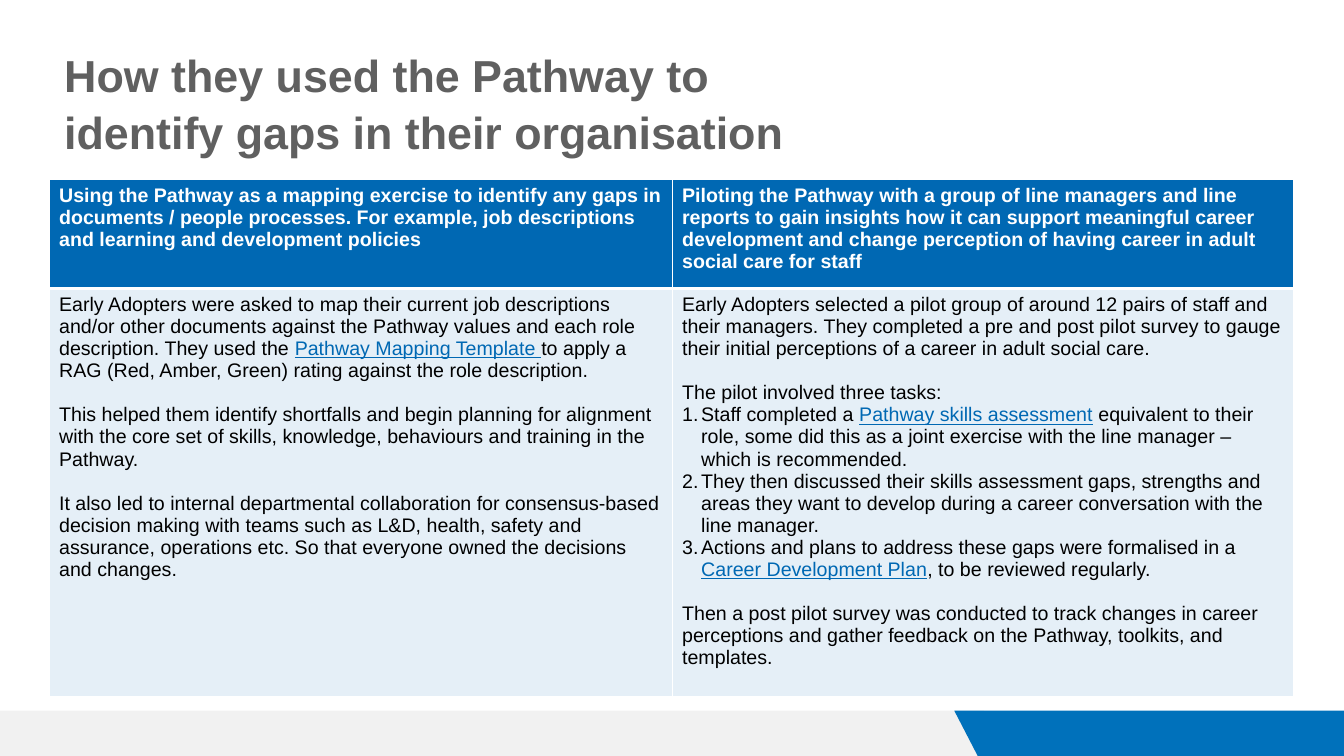
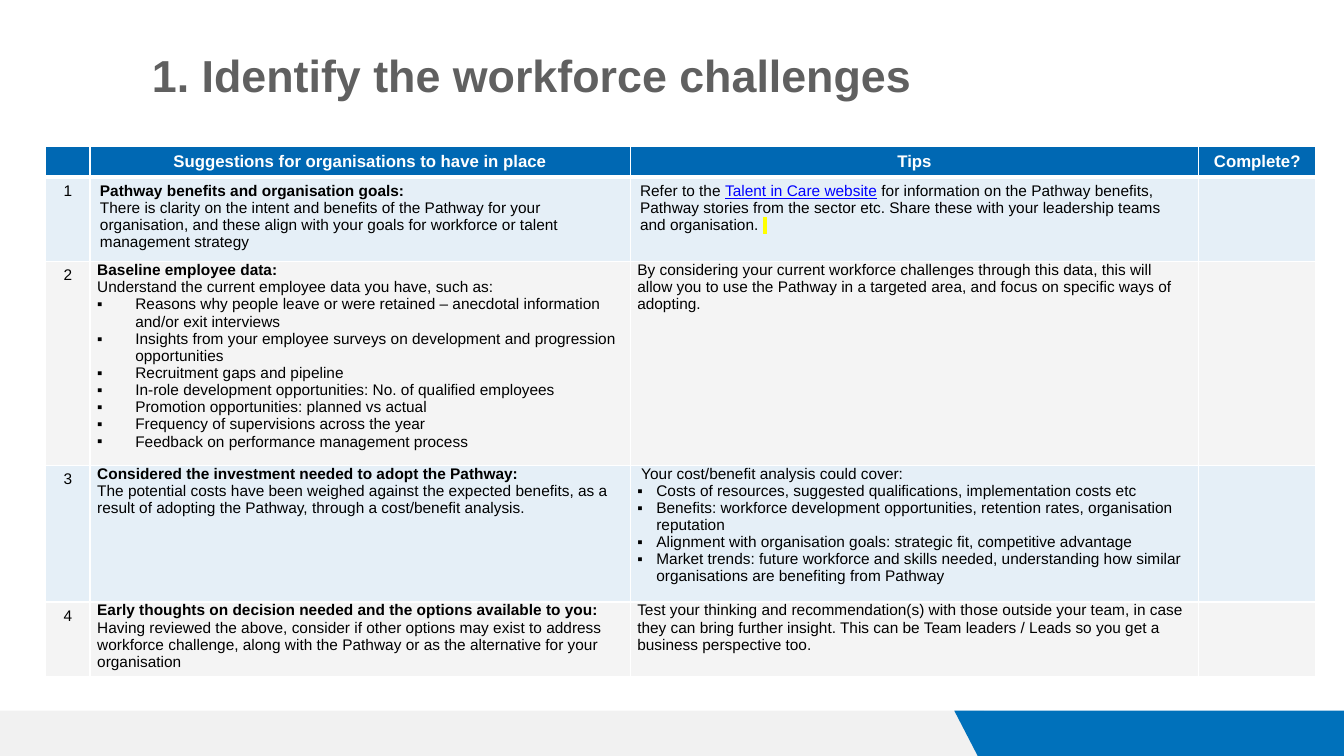
from dataclasses import dataclass
from typing import Any

import pptx
import pptx.dml.color
import pptx.enum.text
import pptx.oxml.ns
import pptx.util
from lxml import etree

Cm = pptx.util.Cm
Pt = pptx.util.Pt
qn = pptx.oxml.ns.qn

FONT = "Arial"
COLORS = {
    "white": "FFFFFF",
    "black": "000000",
    "title": "606060",
    "head": "0068B3",
    "web": "0000FF",
    "blue": "0071BB",
    "grey": "CACACA",
    "mark": "FFFF00",
}
WIDE = {"margin_left": Cm(0.25), "margin_right": Cm(0.25),
        "margin_top": Cm(0.13), "margin_bottom": Cm(0.13)}
TIGHT = {"margin_left": Cm(0.18), "margin_right": Cm(0.18),
         "margin_top": 0, "margin_bottom": 0}
CENTER = pptx.enum.text.PP_ALIGN.CENTER
LEFT = pptx.enum.text.PP_ALIGN.LEFT


@dataclass(frozen=True)
class Run:
    text: str
    bold: bool = False
    color: str = "black"
    under: bool = False
    mark: str = ""


@dataclass(frozen=True)
class Para:
    runs: tuple[Run, ...]
    gap: float = 0
    align: Any = LEFT
    bullet: str = ""
    left: float = 0
    hang: float = 0


@dataclass(frozen=True)
class Fill:
    color: str
    alpha: int = 100


@dataclass(frozen=True)
class Cell:
    paras: tuple[Para, ...]
    fill: Fill
    pad: dict[str, int]
    size: float


@dataclass(frozen=True)
class Band:
    points: tuple[tuple[float, float], ...]
    fill: Fill


@dataclass(frozen=True)
class Grid:
    left: float
    top: float
    widths: tuple[float, ...]
    heights: tuple[float, ...]
    cells: tuple[tuple[Cell, ...], ...]


HEAD = Fill("head")
PALE = Fill("head", 10)
SOFT = Fill("grey", 20)
BANDS = (
    Band(((0, 17.91), (24.79, 17.91), (25.37, 19.05), (0, 19.05)), Fill("grey", 25)),
    Band(((24.05, 17.91), (33.87, 17.91), (33.87, 19.05), (24.64, 19.05)), Fill("blue")),
)


def apply(target: Any, values: dict[str, Any]) -> None:
    for name, value in values.items():
        setattr(target, name, value)


def tint(color: str) -> pptx.dml.color.RGBColor:
    return pptx.dml.color.RGBColor.from_string(COLORS[color])


def paint(target: Any, node: Any, fill: Fill) -> None:
    target.fill.solid()
    target.fill.fore_color.rgb = tint(fill.color)
    if fill.alpha < 100:
        rgb = node.find(qn("a:solidFill")).find(qn("a:srgbClr"))
        etree.SubElement(rgb, qn("a:alpha"), val=str(fill.alpha * 1000))


def write(line: Any, para: Para, size: float) -> None:
    apply(line, {"alignment": para.align, "space_before": Pt(para.gap)})
    props = line._p.get_or_add_pPr()
    props.set("marL", str(Cm(para.left)))
    props.set("indent", str(-Cm(para.hang)))
    if para.bullet == "1.":
        etree.SubElement(props, qn("a:buFont"), typeface=FONT)
        etree.SubElement(props, qn("a:buAutoNum"), type="arabicPeriod")
    elif para.bullet:
        etree.SubElement(props, qn("a:buFont"), typeface=FONT)
        etree.SubElement(props, qn("a:buChar"), char=para.bullet)
    for part in para.runs:
        run = line.add_run()
        run.text = part.text
        run.font.color.rgb = tint(part.color)
        if part.mark:
            glow = etree.SubElement(run._r.get_or_add_rPr(), qn("a:highlight"))
            etree.SubElement(glow, qn("a:srgbClr"), val=COLORS[part.mark])
        apply(run.font, {"name": FONT, "size": Pt(size), "bold": part.bold,
                         "underline": part.under})
    if not para.runs:
        etree.SubElement(line._p, qn("a:endParaRPr"), sz=str(int(size * 100)))


def pour(frame: Any, paras: tuple[Para, ...], size: float) -> None:
    for index, para in enumerate(paras):
        line = frame.add_paragraph() if index else frame.paragraphs[0]
        write(line, para, size)


def edge(props: Any, row: int) -> None:
    widths = {"lnL": 1, "lnR": 1, "lnT": 3 if row == 1 else 1, "lnB": 1 if row else 3}
    for index, (side, width) in enumerate(widths.items()):
        line = etree.Element(qn(f"a:{side}"), w=str(Pt(width)))
        fill = etree.SubElement(line, qn("a:solidFill"))
        etree.SubElement(fill, qn("a:srgbClr"), val=COLORS["white"])
        props.insert(index, line)


def draw_band(slide: Any, band: Band) -> None:
    points = [(Cm(x), Cm(y)) for x, y in band.points]
    pen = slide.shapes.build_freeform(*points[0])
    pen.add_line_segments(points[1:])
    shape = pen.convert_to_shape()
    shape.shadow.inherit = False
    paint(shape, shape._element.spPr, band.fill)
    shape.line.fill.background()


def draw_grid(slide: Any, grid: Grid) -> None:
    frame = slide.shapes.add_table(
        len(grid.heights), len(grid.widths), Cm(grid.left), Cm(grid.top),
        Cm(sum(grid.widths)), Cm(sum(grid.heights)))
    table = frame.table
    apply(table, {"first_row": False, "horz_banding": False})
    for col, width in zip(table.columns, grid.widths):
        col.width = Cm(width)
    for row, height in zip(table.rows, grid.heights):
        row.height = Cm(height)
    for y, cells in enumerate(grid.cells):
        for x, item in enumerate(cells):
            cell = table.cell(y, x)
            apply(cell, item.pad)
            props = cell._tc.get_or_add_tcPr()
            paint(cell, props, item.fill)
            edge(props, y)
            pour(cell.text_frame, item.paras, item.size)


def draw_slide(deck: Any, left: float, title: tuple[str, ...], grid: Grid) -> None:
    slide = deck.slides.add_slide(deck.slide_layouts[6])
    for band in BANDS:
        draw_band(slide, band)
    box = slide.shapes.add_textbox(Cm(left), Cm(1.09), Cm(23), Cm(1.96))
    box.text_frame.word_wrap = True
    paras = tuple(Para((Run(text, True, "title"),), 2 if index else 0)
                  for index, text in enumerate(title))
    pour(box.text_frame, paras, 32)
    draw_grid(slide, grid)


def plain(text: str, gap: float = 0) -> Para:
    return Para((Run(text),), gap)


def link(text: str, color: str = "head") -> Run:
    return Run(text, color=color, under=True)


def step(*runs: Run) -> Para:
    return Para(runs, bullet="1.", left=0.48, hang=0.48)


def points(indent: float, *texts: str) -> tuple[Para, ...]:
    return tuple(Para((Run(text),), bullet="▪", left=indent, hang=indent) for text in texts)


def head(text: str, size: float, align: Any = LEFT) -> Cell:
    runs = (Run(text, True, "white"),) if text else ()
    return Cell((Para(runs, align=align),), HEAD, WIDE, size)


def topic(title: str, text: str) -> tuple[Para, ...]:
    return Para((Run(title, True),)), plain(text)


def task(index: int, main: tuple[Para, ...], tips: tuple[Para, ...]) -> tuple[Cell, ...]:
    fill = PALE if index % 2 else SOFT
    pad = WIDE if index == 1 else TIGHT
    label = (Para((Run(str(index)),), align=CENTER),)
    return (Cell(label, fill, WIDE, 11), Cell(main, fill, pad, 11),
            Cell(tips, fill, pad, 11), Cell((Para(()),), fill, WIDE, 11))


MAPPING = (
    Para((Run("Early Adopters were asked to map their current job descriptions and/or other documents against the Pathway values and each role description. They used the "),
          link("Pathway Mapping Template "),
          Run("to apply a RAG (Red, Amber, Green) rating against the role description."))),
    plain("This helped them identify shortfalls and begin planning for alignment with the core set of skills, knowledge, behaviours and training in the Pathway.", 16),
    plain("It also led to internal departmental collaboration for consensus-based decision making with teams such as L&D, health, safety and assurance, operations etc. So that everyone owned the decisions and changes.", 16),
)
PILOT = (
    plain("Early Adopters selected a pilot group of around 12 pairs of staff and their managers. They completed a pre and post pilot survey to gauge their initial perceptions of a career in adult social care."),
    plain("The pilot involved three tasks:", 16),
    step(Run("Staff completed a "), link("Pathway skills assessment"),
         Run(" equivalent to their role, some did this as a joint exercise with the line manager – which is recommended.")),
    step(Run("They then discussed their skills assessment gaps, strengths and areas they want to develop during a career conversation with the line manager.")),
    step(Run("Actions and plans to address these gaps were formalised in a "),
         link("Career Development Plan"), Run(", to be reviewed regularly.")),
    plain("Then a post pilot survey was conducted to track changes in career perceptions and gather feedback on the Pathway, toolkits, and templates.", 16),
)
USES = Grid(1.24, 4.53, (15.7, 15.67), (2.74, 9.68), (
    (head("Using the Pathway as a mapping exercise to identify any gaps in documents / people processes. For example, job descriptions and learning and development policies", 14),
     head("Piloting the Pathway with a group of line managers and line reports to gain insights how it can support meaningful career development and change perception of having career in adult social care for staff", 14)),
    tuple(Cell(paras, PALE, WIDE, 14) for paras in (MAPPING, PILOT)),
))
TASKS = Grid(1.15, 3.7, (1.12, 13.61, 14.33, 2.95), (0.75, 1.98, 4.74, 3.45, 1.88), (
    tuple(head(text, 12, CENTER) for text in
          ("", "Suggestions for organisations to have in place", "Tips", "Complete?")),
    task(1, topic("Pathway benefits and organisation goals:",
                  "There is clarity on the intent and benefits of the Pathway for your organisation, and these align with your goals for workforce or talent management strategy"),
         (Para((Run("Refer to the "), link("Talent in Care website", "web"),
                Run(" for information on the Pathway benefits, Pathway stories from the sector etc. Share these with your leadership teams and organisation. "),
                Run(" ", True, mark="mark"))),)),
    task(2, topic("Baseline employee data:",
                  "Understand the current employee data you have, such as:") + points(
        0.96,
        "Reasons why people leave or were retained – anecdotal information and/or exit interviews",
        "Insights from your employee surveys on development and progression opportunities",
        "Recruitment gaps and pipeline",
        "In-role development opportunities: No. of qualified employees",
        "Promotion opportunities: planned vs actual",
        "Frequency of supervisions across the year",
        "Feedback on performance management process"),
         (plain("By considering your current workforce challenges through this data, this will allow you to use the Pathway in a targeted area, and focus on specific ways of adopting."),)),
    task(3, topic("Considered the investment needed to adopt the Pathway:",
                  "The potential costs have been weighed against the expected benefits, as a result of adopting the Pathway, through a cost/benefit analysis."),
         (Para((Run("Your cost/benefit analysis could cover:"),), left=0.1),) + points(
        0.48,
        "Costs of resources, suggested qualifications, implementation costs etc",
        "Benefits: workforce development opportunities, retention rates, organisation reputation",
        "Alignment with organisation goals: strategic fit, competitive advantage",
        "Market trends: future workforce and skills needed, understanding how similar organisations are benefiting from Pathway")),
    task(4, topic("Early thoughts on decision needed and the options available to you:",
                  "Having reviewed the above, consider if other options may exist to address workforce challenge, along with the Pathway or as the alternative for your organisation"),
         (plain("Test your thinking and recommendation(s) with those outside your team, in case they can bring further insight. This can be Team leaders / Leads so you get a business perspective too."),)),
))


def main() -> None:
    deck = pptx.Presentation()
    apply(deck, {"slide_width": Cm(33.87), "slide_height": Cm(19.05)})
    draw_slide(deck, 1.37, ("How they used the Pathway to",
                            "identify gaps in their organisation"), USES)
    draw_slide(deck, 3.58, ("1. Identify the workforce challenges",), TASKS)
    deck.save("out.pptx")


if __name__ == "__main__":
    main()
